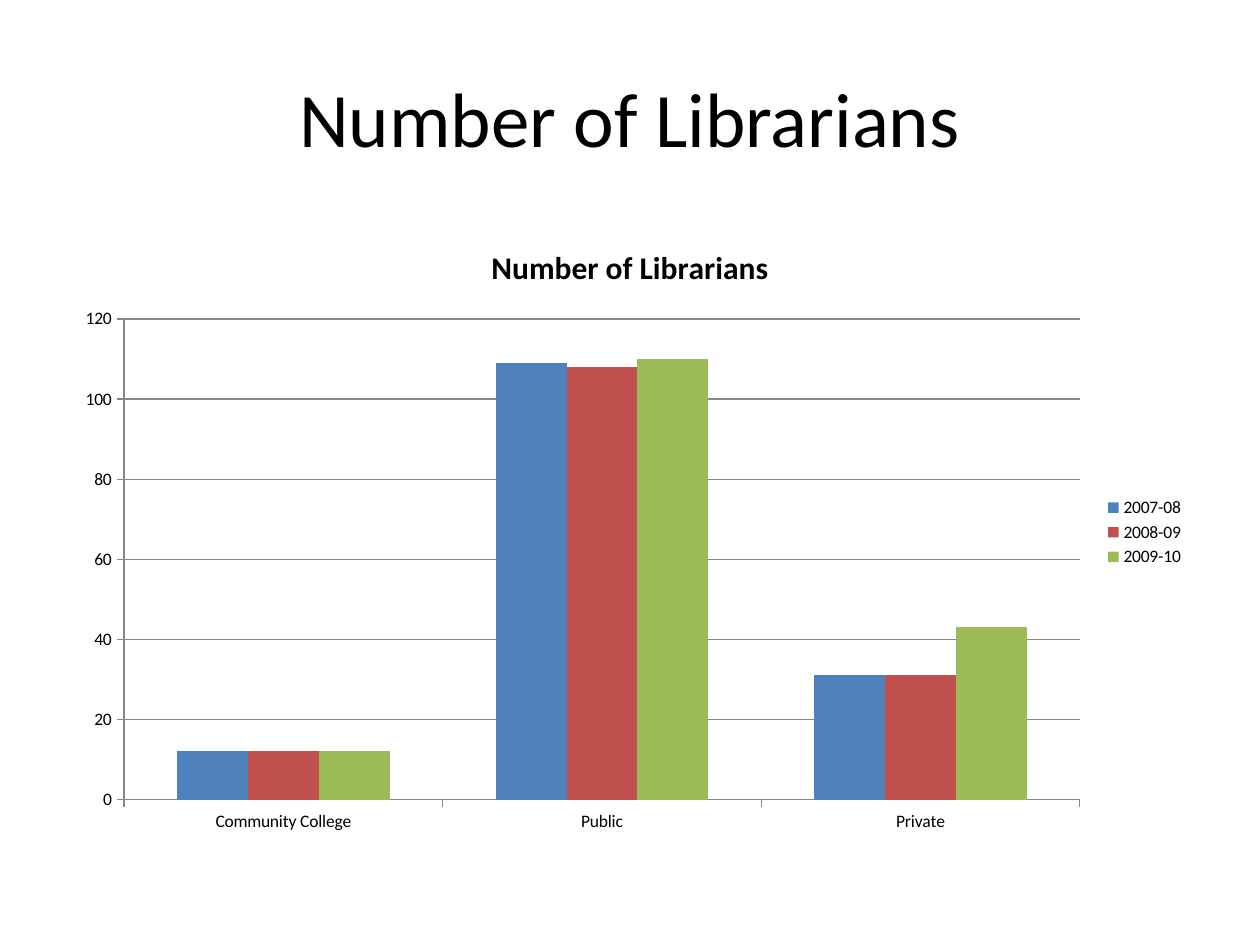
import pptx
import pptx.chart.data
import pptx.dml.color
import pptx.enum.chart
import pptx.enum.text
import pptx.util
from pptx.util import Inches

# Content
TITLE = "Number of Librarians"
CATEGORIES = ["Community College", "Public", "Private"]
RGBColor = pptx.dml.color.RGBColor
BLACK = RGBColor(0x00, 0x00, 0x00)
GREY = RGBColor(0x86, 0x86, 0x86)
BLUE = RGBColor(0x4F, 0x81, 0xBD)
RED = RGBColor(0xC0, 0x50, 0x4D)
GREEN = RGBColor(0x9B, 0xBB, 0x59)
YEARS = [
    ("2007-08", (12, 109, 31), BLUE),
    ("2008-09", (12, 108, 31), RED),
    ("2009-10", (12, 110, 43), GREEN),
]

# Formats
FONT = "Calibri"
TITLE_PLACE = dict(left=Inches(0.5), top=Inches(0.3), width=Inches(9), height=Inches(1.25))
CHART_PLACE = (Inches(0.5), Inches(1.75), Inches(9), Inches(4.95))
TICKS = pptx.enum.chart.XL_TICK_MARK


def set_all(target, values):
    for name, value in values.items():
        setattr(target, name, value)


def style_font(font, size, bold=False):
    set_all(font, dict(name=FONT, size=pptx.util.Pt(size), bold=bold))
    font.color.rgb = BLACK


def style_line(line):
    line.color.rgb = GREY
    line.width = pptx.util.Pt(0.75)


deck = pptx.Presentation()
set_all(deck, dict(slide_width=Inches(10), slide_height=Inches(7.5)))
page = deck.slides.add_slide(deck.slide_layouts[5])

# Slide title
heading = page.shapes.title
set_all(heading, TITLE_PLACE)
heading.text_frame.text = TITLE
heading.text_frame.vertical_anchor = pptx.enum.text.MSO_ANCHOR.MIDDLE
para = heading.text_frame.paragraphs[0]
para.alignment = pptx.enum.text.PP_ALIGN.CENTER
style_font(para.runs[0].font, 44)

# Chart data
data = pptx.chart.data.CategoryChartData()
data.categories = CATEGORIES
for year, counts, color in YEARS:
    data.add_series(year, counts)
chart = page.shapes.add_chart(
    pptx.enum.chart.XL_CHART_TYPE.COLUMN_CLUSTERED, *CHART_PLACE, data
).chart
style_font(chart.font, 10)

# Chart title and legend
chart.has_title = True
chart.chart_title.include_in_layout = False
caption = chart.chart_title.text_frame
caption.text = TITLE
style_font(caption.paragraphs[0].runs[0].font, 18, bold=True)
chart.has_legend = True
set_all(chart.legend, dict(
    position=pptx.enum.chart.XL_LEGEND_POSITION.RIGHT, include_in_layout=False))

# Columns
plot = chart.plots[0]
set_all(plot, dict(gap_width=150, overlap=0, vary_by_categories=False))
for series, (year, counts, color) in zip(plot.series, YEARS):
    series.format.fill.solid()
    series.format.fill.fore_color.rgb = color

# Axes
for axis in (chart.category_axis, chart.value_axis):
    set_all(axis, dict(major_tick_mark=TICKS.OUTSIDE, minor_tick_mark=TICKS.NONE))
    style_line(axis.format.line)
set_all(chart.value_axis, dict(
    minimum_scale=0, maximum_scale=120, major_unit=20, has_major_gridlines=True))
style_line(chart.value_axis.major_gridlines.format.line)

deck.save("out.pptx")
